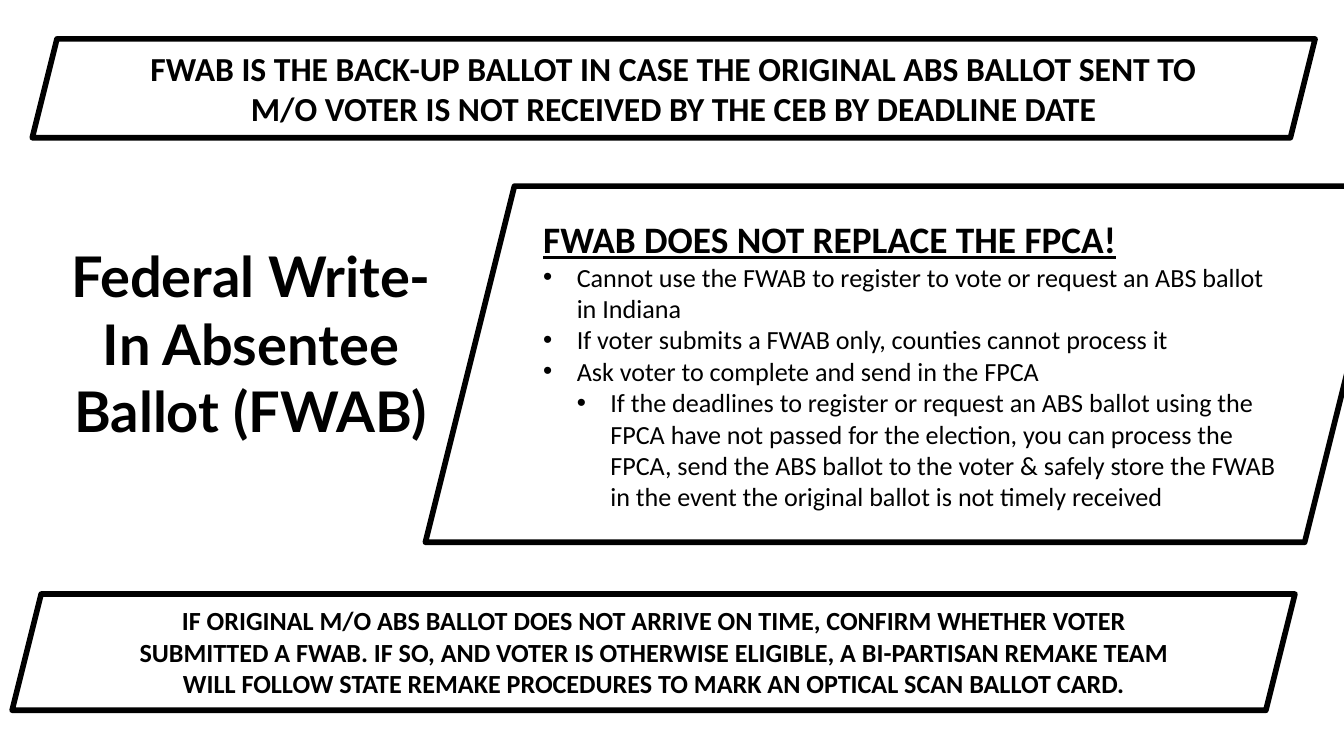
from dataclasses import dataclass

from lxml import etree
from pptx import Presentation
from pptx.dml.color import RGBColor
from pptx.enum.shapes import MSO_SHAPE
from pptx.enum.text import MSO_ANCHOR, MSO_AUTO_SIZE, PP_ALIGN
from pptx.oxml.ns import qn
from pptx.util import Inches, Pt

BLACK = RGBColor(0x00, 0x00, 0x00)
WHITE = RGBColor(0xFF, 0xFF, 0xFF)
PARALLELOGRAM = MSO_SHAPE.PARALLELOGRAM
TOP, MIDDLE = MSO_ANCHOR.TOP, MSO_ANCHOR.MIDDLE
FIT_SHAPE, NO_FIT = MSO_AUTO_SIZE.SHAPE_TO_FIT_TEXT, MSO_AUTO_SIZE.NONE
LEFT, CENTER = PP_ALIGN.LEFT, PP_ALIGN.CENTER

SLIDE_WIDTH, SLIDE_HEIGHT = Inches(20), Inches(11.25)
COLUMNS, ROWS = 20, 11.25
BULLET_INDENT = Inches(0.5)
TITLE_FONT, TEXT_FONT = "Lato", "Calibri"
TITLE = "Federal Write-In Absentee Ballot (FWAB)"


@dataclass(frozen=True)
class Area:
    """Place on the slide, in grid columns and rows."""
    column: float
    row: float
    columns: float
    rows: float

    def box(self) -> tuple[int, int, int, int]:
        column, row = SLIDE_WIDTH / COLUMNS, SLIDE_HEIGHT / ROWS
        return (int(self.column * column), int(self.row * row),
                int(self.columns * column), int(self.rows * row))


@dataclass(frozen=True)
class Line:
    text: str
    size: int
    bold: bool = False
    underline: bool = False
    align: PP_ALIGN = LEFT
    bullet_level: int = 0
    font: str = TEXT_FONT


@dataclass(frozen=True)
class Panel:
    area: Area
    lines: tuple[Line, ...]
    anchor: MSO_ANCHOR = TOP
    fit: MSO_AUTO_SIZE = FIT_SHAPE


TITLE_AREA = Area(0.63, 3.55, 6.21, 4.14)

PANELS = (
    Panel(Area(6.33, 2.77, 14.41, 5.3), (
        Line("FWAB DOES NOT REPLACE THE FPCA!", 40, bold=True, underline=True),
        Line("Cannot use the FWAB to register to vote or request an ABS ballot "
             "in Indiana", 28, bullet_level=1),
        Line("If voter submits a FWAB only, counties cannot process it", 28,
             bullet_level=1),
        Line("Ask voter to complete and send in the FPCA", 28, bullet_level=1),
        Line("If the deadlines to register or request an ABS ballot using the "
             "FPCA have not passed for the election, you can process the FPCA, "
             "send the ABS ballot to the voter & safely store the FWAB in the "
             "event the original ballot is not timely received", 28,
             bullet_level=2),
    ), MIDDLE, NO_FIT),
    Panel(Area(0.48, 0.58, 19.09, 1.47), (
        Line("FWAB IS THE BACK-UP BALLOT IN CASE THE ORIGINAL ABS BALLOT SENT "
             "TO M/O VOTER IS NOT RECEIVED BY THE CEB BY DEADLINE DATE", 36,
             bold=True, align=CENTER),
    )),
    Panel(Area(0.18, 8.84, 19.09, 1.73), (
        Line("IF ORIGINAL M/O ABS BALLOT DOES NOT ARRIVE ON TIME, CONFIRM "
             "WHETHER VOTER SUBMITTED A FWAB. IF SO, AND VOTER IS OTHERWISE "
             "ELIGIBLE, A BI-PARTISAN REMAKE TEAM WILL FOLLOW STATE REMAKE "
             "PROCEDURES TO MARK AN OPTICAL SCAN BALLOT CARD.", 28,
             bold=True, align=CENTER),
    )),
)


def add_bullet(paragraph, level: int) -> None:
    paragraph.level = level - 1
    properties = paragraph._p.get_or_add_pPr()
    properties.set("marL", str(level * BULLET_INDENT))
    properties.set("indent", str(-BULLET_INDENT))
    etree.SubElement(properties, qn("a:buFont")).set("typeface", "Arial")
    etree.SubElement(properties, qn("a:buChar")).set("char", "•")


def write_lines(frame, lines: tuple[Line, ...]) -> None:
    for index, line in enumerate(lines):
        paragraph = frame.add_paragraph() if index else frame.paragraphs[0]
        paragraph.alignment = line.align
        if line.bullet_level:
            add_bullet(paragraph, line.bullet_level)
        run = paragraph.add_run()
        run.text = line.text
        font = run.font
        font.name, font.size = line.font, Pt(line.size)
        font.bold, font.underline = line.bold, line.underline
        font.color.rgb = BLACK


def add_title(slide) -> None:
    title = slide.shapes.title
    title.left, title.top, title.width, title.height = TITLE_AREA.box()
    frame = title.text_frame
    frame.word_wrap = True
    frame.auto_size = FIT_SHAPE
    frame.vertical_anchor = TOP
    write_lines(frame, (Line(TITLE, 60, bold=True, align=CENTER,
                             font=TITLE_FONT),))


def add_panel(slide, panel: Panel) -> None:
    shape = slide.shapes.add_shape(PARALLELOGRAM, *panel.area.box())
    shape.shadow.inherit = False
    shape.fill.solid()
    shape.fill.fore_color.rgb = WHITE
    color = shape._element.spPr.find(qn("a:solidFill")).find(qn("a:srgbClr"))
    etree.SubElement(color, qn("a:alpha")).set("val", "95000")
    shape.line.color.rgb = BLACK
    shape.line.width = Pt(6)

    frame = shape.text_frame
    frame.word_wrap = True
    frame.auto_size = panel.fit
    frame.vertical_anchor = panel.anchor
    frame.margin_left = frame.margin_right = 0
    frame.margin_top = frame.margin_bottom = 0
    write_lines(frame, panel.lines)


def main() -> None:
    deck = Presentation()
    deck.slide_width, deck.slide_height = SLIDE_WIDTH, SLIDE_HEIGHT
    title_only = deck.slide_layouts[5]
    slide = deck.slides.add_slide(title_only)
    add_title(slide)
    for panel in PANELS:
        add_panel(slide, panel)
    deck.save("out.pptx")


if __name__ == "__main__":
    main()
